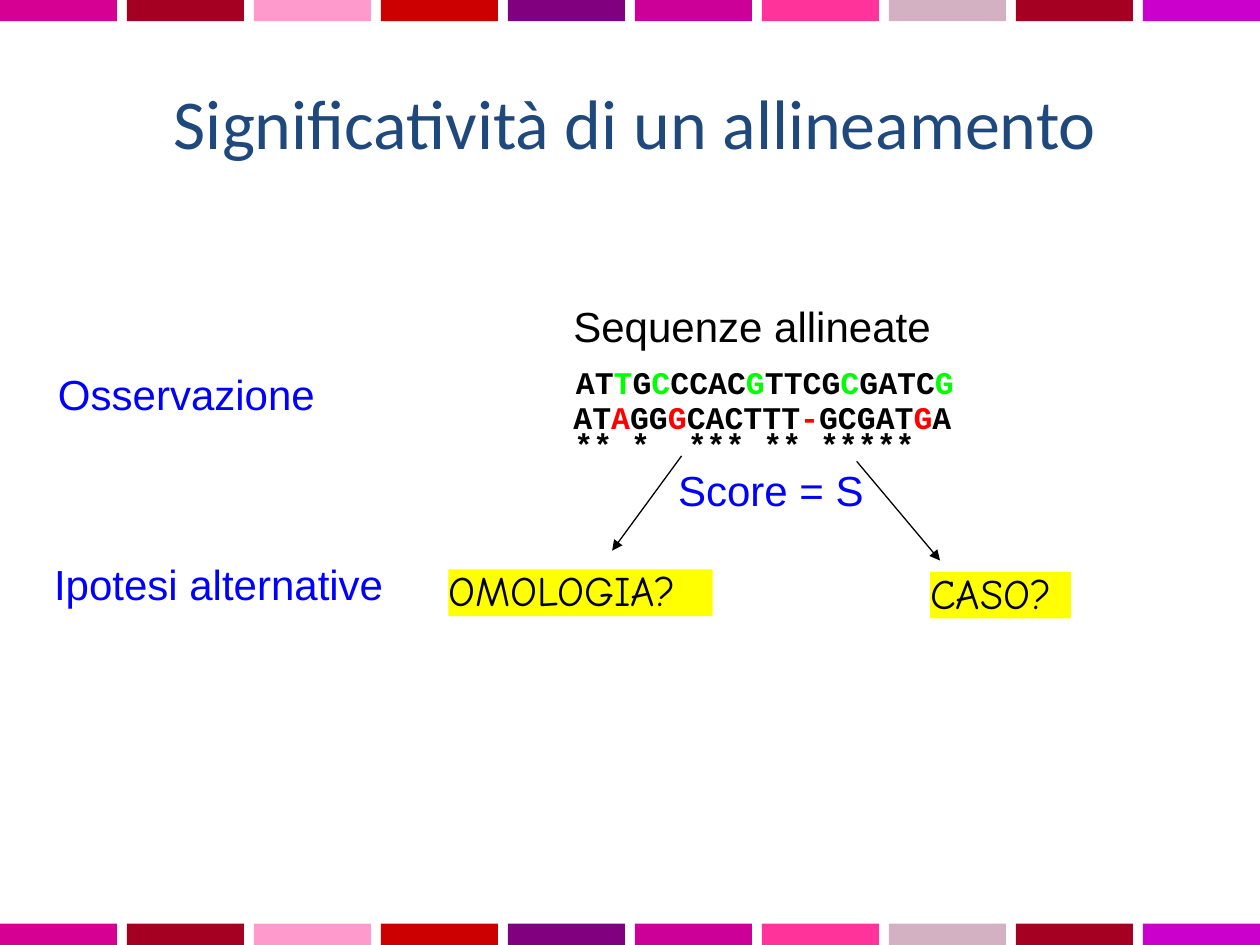
import itertools
import pptx
import pptx.dml.color
import pptx.enum.dml
import pptx.enum.shapes
import pptx.enum.text
import pptx.oxml
import pptx.oxml.ns
import pptx.util

Cm = pptx.util.Cm
Pt = pptx.util.Pt
RGB = pptx.dml.color.RGBColor.from_string

THEME = {
    "black": "000000", "blue": "0000FF", "white": "FFFFFF", "yellow": "FFFF00",
    "red": "FF0000", "green": "00FF00", "navy": "1F497D",
    "bands": ["D60093", "A50021", "FE9ACC", "CC0000", "800080",
              "CC0099", "FF3399", "D3B1C2", "A50021", "CC00CC"],
    "title": {"name": "Calibri", "size": Pt(40)},
    "body": {"name": "Arial", "size": Pt(24)},
    "hand": {"name": "Comic Neue", "size": Pt(24)},
    "code": {"name": "Courier New", "size": Pt(18), "bold": True},
}


def add_text(box, spans, font, spacing=0.93, first=True):
    """Write (text, colour) spans as one paragraph of the box."""
    frame = box.text_frame
    para = frame.paragraphs[0] if first else frame.add_paragraph()
    para.alignment = pptx.enum.text.PP_ALIGN.LEFT
    para.line_spacing = spacing
    for text, colour in spans:
        span = para.add_run()
        span.text = text
        for name, value in THEME[font].items():
            setattr(span.font, name, value)
        span.font.color.rgb = RGB(THEME[colour])
    return para


def add_box(left, top, width, height, fill=None, margin=0):
    """Add a top-anchored rectangle, or a text box if there is no fill."""
    place = [Cm(v) for v in (left, top, width, height)]
    if fill:
        box = page.shapes.add_shape(pptx.enum.shapes.MSO_SHAPE.RECTANGLE, *place)
        box.shadow.inherit = False
        box.fill.solid()
        box.fill.fore_color.rgb = RGB(fill)
        box.line.fill.background()
    else:
        box = page.shapes.add_textbox(*place)
    frame_format = {"word_wrap": True, "vertical_anchor": pptx.enum.text.MSO_ANCHOR.TOP}
    for side in ("left", "top", "right", "bottom"):
        frame_format["margin_" + side] = Cm(margin)
    for name, value in frame_format.items():
        setattr(box.text_frame, name, value)
    return box


deck = pptx.Presentation()
deck.slide_width, deck.slide_height = Cm(25.4), Cm(19.05)
page = deck.slides.add_slide(deck.slide_layouts[6])

# Observation and score
box = add_box(1.17, 7.52, 18.97, 2.87, THEME["white"])
add_text(box, [("Osservazione", "blue")], "body")
score = add_text(box, [("Score = S", "blue")], "body", first=False)
score.space_before = Pt(28)
score_format = score._p.get_or_add_pPr()
score_format.set("marL", str(Cm(12.5)))
score_format.set("indent", "0")

# Colour bands along the top and bottom edges
for top in (0, 18.62):
    for column, colour in enumerate(THEME["bands"]):
        add_box(column * 2.56, top, 2.36, 0.43, colour)

# Aligned sequences, with the marked positions in colour
add_text(add_box(11.56, 6.15, 8.69, 0.94), [("Sequenze allineate", "black")], "body")
sequences = [
    (11.61, 7.39, "ATTGCCCACGTTCGCGATCG", "green", {2, 4, 9, 14, 19}),
    (11.56, 8.08, "ATAGGGCACTTT-GCGATGA", "red", {2, 5, 12, 18}),
    (11.58, 8.64, "** *  *** ** *****", "black", set()),
]
for left, top, sequence, colour, marked in sequences:
    groups = itertools.groupby(enumerate(sequence), lambda item: item[0] in marked)
    spans = [("".join(letter for _, letter in letters), colour if hit else "black")
             for hit, letters in groups]
    add_text(add_box(left, top, 9.3, 0.71), spans, "code", 0.94)

# Arrows to the two hypotheses
for ends in ((13.74, 9.19, 12.34, 11.1), (17.27, 9.3, 18.95, 11.3)):
    arrow = page.shapes.add_connector(
        pptx.enum.shapes.MSO_CONNECTOR.STRAIGHT, *[Cm(v) for v in ends])
    arrow.line.width = Pt(0.75)
    arrow.line.color.rgb = RGB(THEME["black"])
    head = pptx.oxml.parse_xml(
        '<a:tailEnd %s type="triangle"/>' % pptx.oxml.ns.nsdecls("a"))
    arrow.line._get_or_add_ln().append(head)
    arrow._element.spPr.append(
        pptx.oxml.parse_xml("<a:effectLst %s/>" % pptx.oxml.ns.nsdecls("a")))

# Alternative hypotheses
labels = [
    (1.09, 11.35, 6.8, "white", "Ipotesi alternative", "blue", "body"),
    (9.04, 11.48, 5.33, "yellow", "OMOLOGIA?", "black", "hand"),
    (18.75, 11.53, 2.84, "yellow", "CASO?", "black", "hand"),
]
for left, top, width, fill, text, colour, font in labels:
    add_text(add_box(left, top, width, 0.94, THEME[fill]), [(text, colour)], font)

# Title
title = add_text(add_box(0.2, 1.47, 25.2, 1.85, margin=0.13),
                 [("Significatività di un allineamento", "navy")], "title", 1.0)
title.alignment = pptx.enum.text.PP_ALIGN.CENTER

deck.save("out.pptx")
